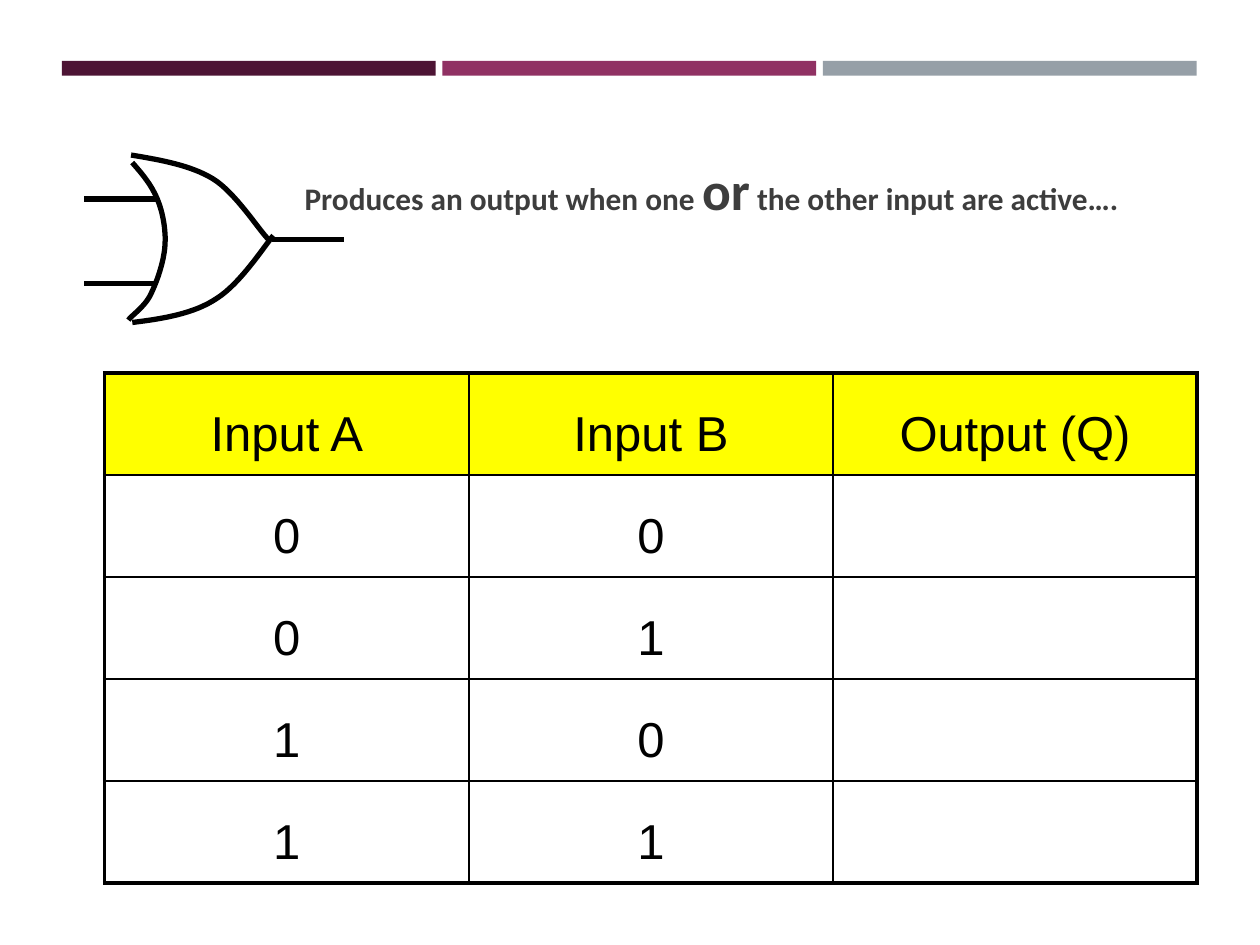
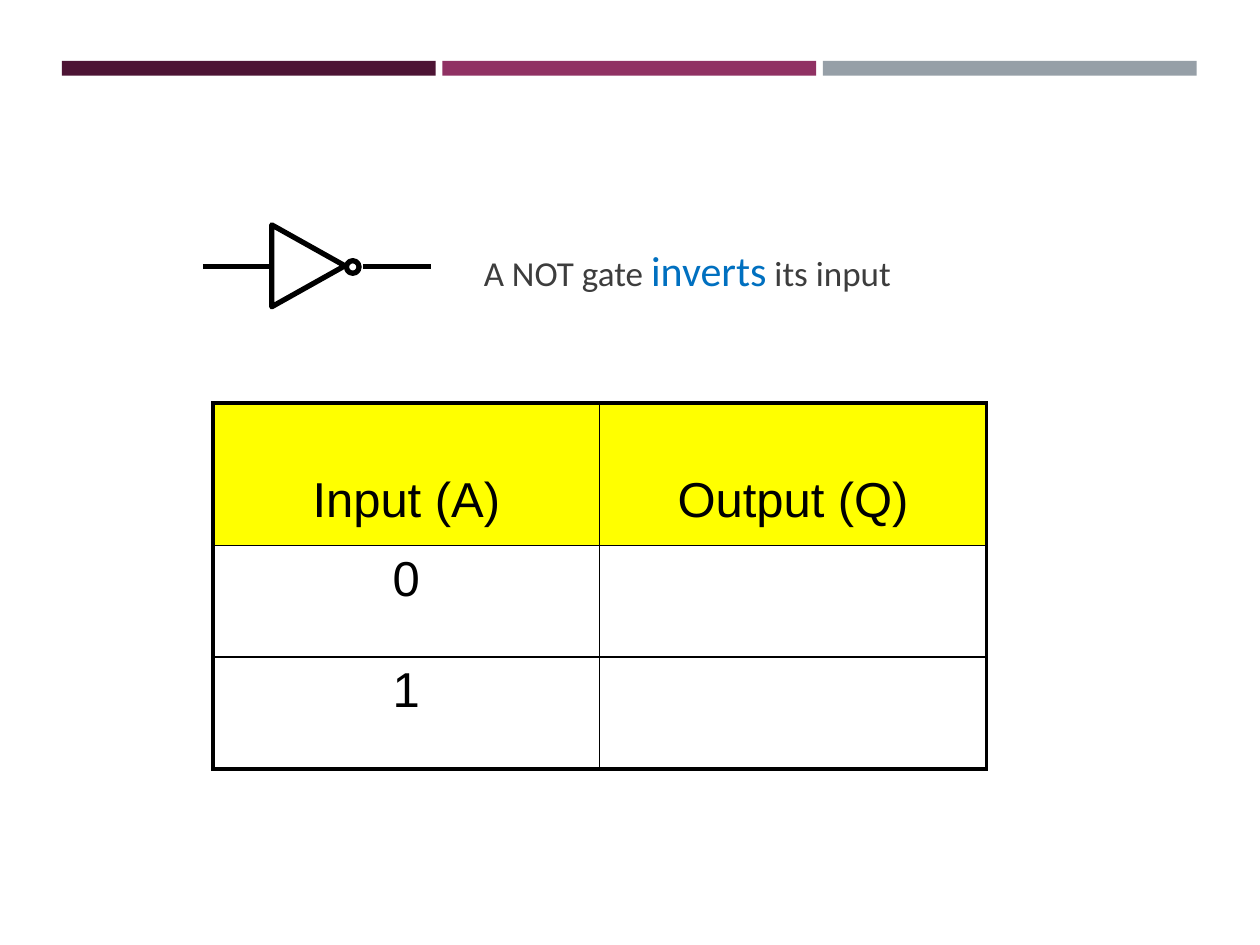
from lxml.etree import SubElement as Sub
from pptx import Presentation
from pptx.dml.color import RGBColor as RGB
from pptx.enum.shapes import MSO_CONNECTOR as LINK, MSO_SHAPE as SHAPE
from pptx.enum.text import PP_ALIGN as ALIGN
from pptx.oxml import parse_xml
from pptx.oxml.ns import nsdecls, qn
from pptx.util import Pt

BLACK = RGB(0, 0, 0)
WHITE = RGB(255, 255, 255)
YELLOW = RGB(255, 255, 0)
PLUM = RGB(0x4D, 0x14, 0x34)
BERRY = RGB(0x90, 0x31, 0x63)
STEEL = RGB(0x96, 0x9F, 0xA7)
GREY = RGB(0x3D, 0x3D, 0x3D)
BLUE = RGB(0, 0x70, 0xC0)


class Deck:
    body = "Calibri"
    grid = "Arial"
    cell = 28
    thin = 1
    thick = 2.25
    wire = 3

    def __init__(self):
        self.prs = Presentation()
        self.prs.slide_width, self.prs.slide_height = Pt(720), Pt(540)

    def page(self):
        self.slide = self.prs.slides.add_slide(self.prs.slide_layouts[6])
        self.shapes = self.slide.shapes
        for i, color in enumerate((PLUM, BERRY, STEEL)):
            self.shape(SHAPE.RECTANGLE, 35.4 + 217.4 * i, 34.8, 213.6, 8.4, color)

    def ink(self, shape):
        shape.shadow.inherit = False
        shape.fill.background()
        shape.line.color.rgb = BLACK
        shape.line.width = Pt(self.wire)

    def shape(self, kind, x, y, w, h, color=None, turn=0):
        shape = self.shapes.add_shape(kind, Pt(x), Pt(y), Pt(w), Pt(h))
        self.ink(shape)
        shape.rotation = turn
        if color is not None:
            shape.fill.solid()
            shape.fill.fore_color.rgb = color
            shape.line.fill.background()

    def line(self, x, end, y):
        line = self.shapes.add_connector(LINK.STRAIGHT, Pt(x), Pt(y), Pt(end), Pt(y))
        line.line.color.rgb = BLACK
        line.line.width = Pt(self.wire)
        Sub(line._element.spPr, qn("a:effectLst"))

    def curve(self, *knots, steps=16):
        dots = [knots[0]]
        for i in range(0, len(knots) - 1, 3):
            quad = knots[i:i + 4]
            for n in range(1, steps + 1):
                t = n / steps
                parts = ((1 - t) ** 3, 3 * t * (1 - t) ** 2, 3 * t * t * (1 - t), t ** 3)
                dots.append([sum(p * k[axis] for p, k in zip(parts, quad)) for axis in (0, 1)])
        dots = [(Pt(x), Pt(y)) for x, y in dots]
        form = self.shapes.build_freeform(*dots[0])
        form.add_line_segments(dots[1:], close=False)
        self.ink(form.convert_to_shape())

    def run(self, para, text, size, color, font, bold=False):
        run = para.add_run()
        run.text = text
        run.font.name = font
        run.font.size = Pt(size)
        run.font.bold = bold
        run.font.color.rgb = color

    def text(self, x, y, w, h, runs, bold=False):
        frame = self.shapes.add_textbox(Pt(x), Pt(y), Pt(w), Pt(h)).text_frame
        frame.word_wrap = True
        frame.margin_top = frame.margin_bottom = 0
        for text, size, color in runs:
            self.run(frame.paragraphs[0], text, size, color, self.body, bold)

    def edges(self, cell, widths):
        props = cell._tc.get_or_add_tcPr()
        for i, (side, width) in enumerate(zip("LRTB", widths)):
            props.insert(i, parse_xml(
                f'<a:ln{side} {nsdecls("a")} w="{Pt(width)}"><a:solidFill>'
                f'<a:srgbClr val="{BLACK}"/></a:solidFill></a:ln{side}>'))

    def table(self, x, y, wide, highs, tops, rows):
        count, cols = len(rows), len(rows[0])
        table = self.shapes.add_table(
            count, cols, Pt(x), Pt(y), Pt(wide * cols), Pt(sum(highs))).table
        table.first_row = table.horz_banding = False
        for col in table.columns:
            col.width = Pt(wide)
        for r, row in enumerate(rows):
            table.rows[r].height = Pt(highs[r])
            for c, text in enumerate(row):
                cell = table.cell(r, c)
                cell.fill.solid()
                cell.fill.fore_color.rgb = WHITE if r else YELLOW
                outer = (c == 0, c == cols - 1, r == 0, r == count - 1)
                self.edges(cell, [self.thick if o else self.thin for o in outer])
                if text:
                    cell.margin_top = Pt(tops[r])
                    para = cell.text_frame.paragraphs[0]
                    para.alignment = ALIGN.CENTER
                    self.run(para, text, self.cell, BLACK, self.grid)


def either(deck):
    deck.page()
    deck.text(167, 89.8, 557, 38, [
        ("Produces an output when one ", 17.9, GREY),
        ("or", 30.6, GREY),
        (" the other input are active….", 17.9, GREY)], bold=True)
    deck.table(59.8, 213.1, 208.1, [58.3] * 5, [19.6] * 5, [
        ("Input A", "Input B", "Output (Q)"),
        ("0", "0", ""), ("0", "1", ""), ("1", "0", ""), ("1", "1", "")])
    deck.curve((75.6, 92.9), (80.6, 98.6), (85.7, 104.4), (89.3, 112.3),
               (92.9, 120.2), (95, 131), (94.3, 140.4),
               (93.6, 150.5), (89.3, 162), (85.7, 169.2),
               (82.1, 175.7), (75.6, 180), (73.4, 182.9))
    deck.curve((74.9, 88.6), (91.4, 91.4), (108.7, 94.3), (121.7, 102.2),
               (134.6, 110.2), (147.6, 131), (153.4, 136.8))
    deck.curve((75.6, 184.3), (92.9, 182.2), (110.9, 179.3), (123.8, 170.6),
               (137.5, 162), (151.2, 140.4), (156.2, 134.6))
    deck.line(155.5, 196.6, 136.8)
    for y in (113.8, 162):
        deck.line(48.2, 89.3, y)


def invert(deck):
    deck.page()
    deck.text(269.4, 139.5, 318, 30, [
        ("A NOT gate ", 20, GREY), ("inverts", 24, BLUE), (" its input", 20, GREY)])
    deck.table(121.7, 230.4, 221, [81.4, 63.8, 63.8], [39.9, 3.6, 3.6], [
        ("Input (A)", "Output (Q)"), ("0", ""), ("1", "")])
    deck.shape(SHAPE.FLOWCHART_EXTRACT, 152.8, 131, 46.8, 41.8, turn=90)
    deck.shape(SHAPE.OVAL, 198, 149, 7.2, 7.2)
    deck.line(207.4, 246.2, 152.1)
    deck.line(115.9, 155.5, 152.1)


def main():
    deck = Deck()
    either(deck)
    invert(deck)
    deck.prs.save("out.pptx")


if __name__ == "__main__":
    main()
